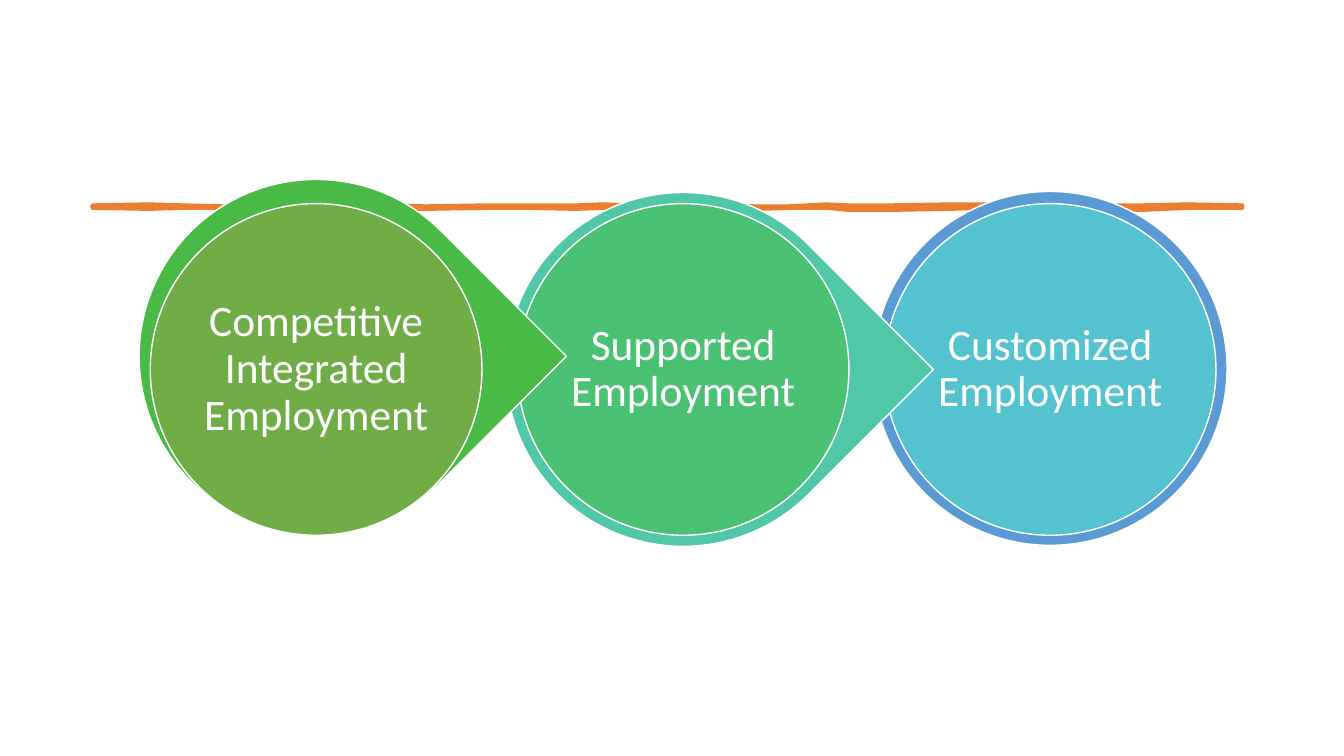
import pptx
import pptx.util
import pptx.dml.color
import pptx.enum.shapes
import pptx.enum.text

PX = 9144  # EMU per px, 100 px to the inch
SHAPES = pptx.enum.shapes.MSO_SHAPE
COLORS = {
    "white": "FFFFFF", "stroke": "ED7D31",
    "green rim": "4ABA46", "green": "70AD47",
    "teal rim": "50C8A7", "teal": "4BC174",
    "blue rim": "5B9BD5", "blue": "55C3CF",
}
# label, rim shape, rim top relative to the disc, colour
STAGES = [
    ("Competitive Integrated Employment", SHAPES.TEAR, -24, "green"),
    ("Supported Employment", SHAPES.TEAR, -11, "teal"),
    ("Customized Employment", SHAPES.OVAL, -12, "blue"),
]
# x, upper edge and lower edge of the hand-drawn stroke
STROKE_EDGES = [
    (0, 2, 4), (55, 1, 5), (90, 2, 4), (130, 3, 4), (200, 2, 5),
    (245, 2, 4), (290, 2, 5), (330, 3, 5), (390, 2, 4), (430, 2, 4),
    (480, 2, 5), (505, 1, 4), (540, 2, 4), (600, 2, 4), (660, 3, 5),
    (690, 3, 4), (728, 1, 4), (750, 2, 6), (790, 2, 6), (850, 1, 5),
    (880, 1, 4), (930, 2, 4), (980, 2, 4), (1040, 2, 6), (1085, 1, 4),
    (1140, 2, 4),
]


def color(name):
    return pptx.dml.color.RGBColor.from_string(COLORS[name])


def paint(shape, fill, line, points):
    shape.shadow.inherit = False
    shape.fill.solid()
    shape.fill.fore_color.rgb = color(fill)
    shape.line.color.rgb = color(line)
    shape.line.width = pptx.util.Pt(points)


def add_stroke(slide, left, top):
    upper = [(left + x, top + high) for x, high, low in STROKE_EDGES]
    lower = [(left + x, top + low) for x, high, low in reversed(STROKE_EDGES)]
    builder = slide.shapes.build_freeform(*upper[0], scale=PX)
    builder.add_line_segments(upper[1:] + lower, close=True)
    paint(builder.convert_to_shape(), "stroke", "stroke", 3.25)


def add_round(slide, kind, left, top, size, fill):
    shape = slide.shapes.add_shape(kind, left * PX, top * PX, size * PX, size * PX)
    paint(shape, fill, "white", 1)
    return shape


def add_label(slide, left, top, size, text):
    frame = slide.shapes.add_textbox(left * PX, top * PX, size * PX, size * PX).text_frame
    frame.word_wrap = True
    frame.vertical_anchor = pptx.enum.text.MSO_ANCHOR.MIDDLE
    frame.margin_left = frame.margin_right = 4 * PX
    frame.margin_top = frame.margin_bottom = 4 * PX
    paragraph = frame.paragraphs[0]
    paragraph.text = text
    paragraph.alignment = pptx.enum.text.PP_ALIGN.CENTER
    paragraph.line_spacing = 0.9
    paragraph.font.name = "Calibri"
    paragraph.font.size = pptx.util.Pt(31)
    paragraph.font.color.rgb = color("white")


def add_process(slide, left, top, pitch, size):
    """Chain of discs, stacked so that each rim points over the next disc."""
    for index, (text, kind, rise, name) in reversed(list(enumerate(STAGES))):
        x = left + index * pitch
        rim = add_round(slide, kind, x - 11, top + rise, size + 22, name + " rim")
        if kind == SHAPES.TEAR:
            rim.rotation = 45
        add_round(slide, SHAPES.OVAL, x, top, size, name)
        add_label(slide, x + 47, top + 47, size - 94, text)


def main():
    presentation = pptx.Presentation()
    presentation.slide_width = 1333 * PX
    presentation.slide_height = 750 * PX
    slide = presentation.slides.add_slide(presentation.slide_layouts[6])
    add_stroke(slide, left=92, top=202)
    add_process(slide, left=149, top=202, pitch=364, size=329)
    presentation.save("out.pptx")


if __name__ == "__main__":
    main()
